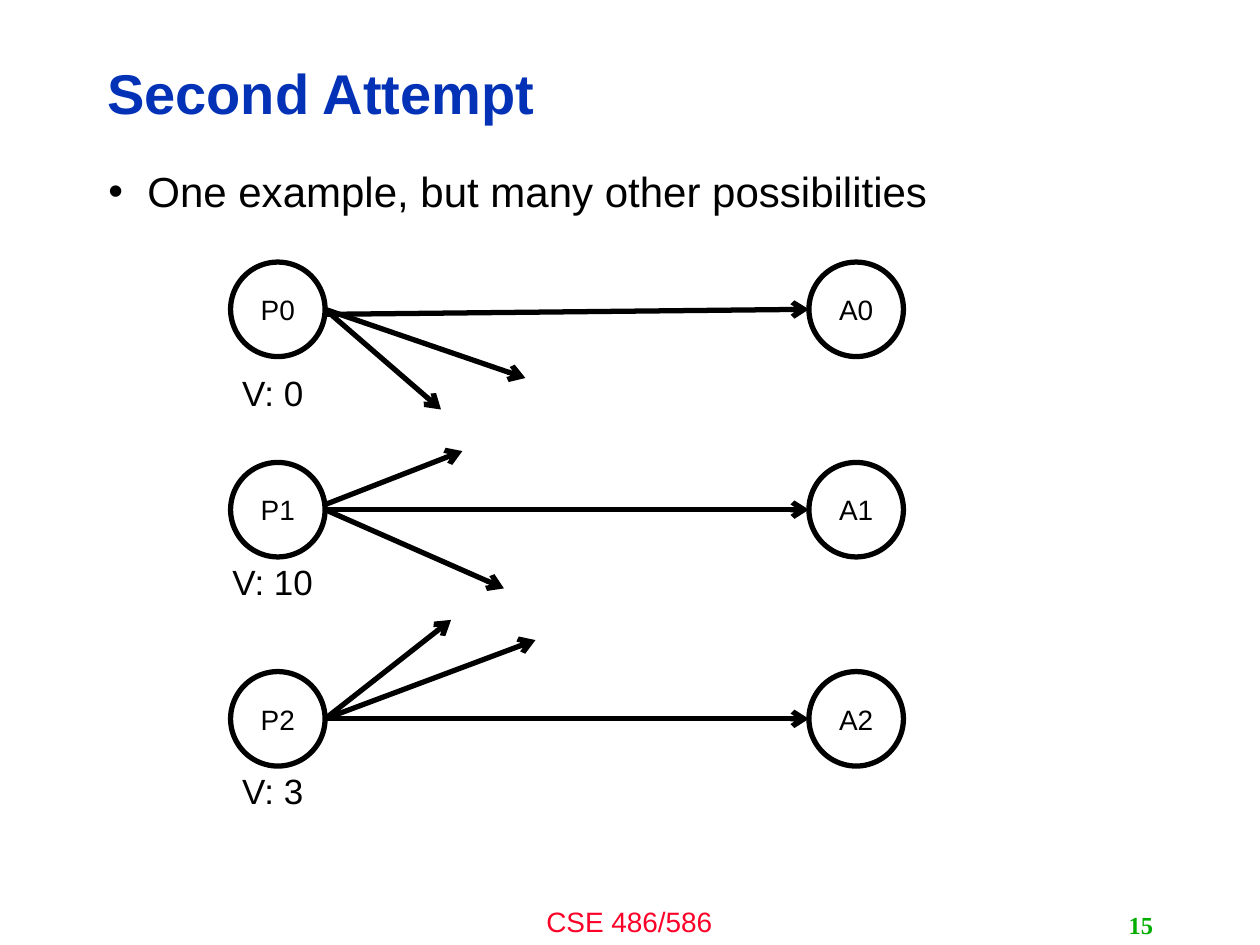
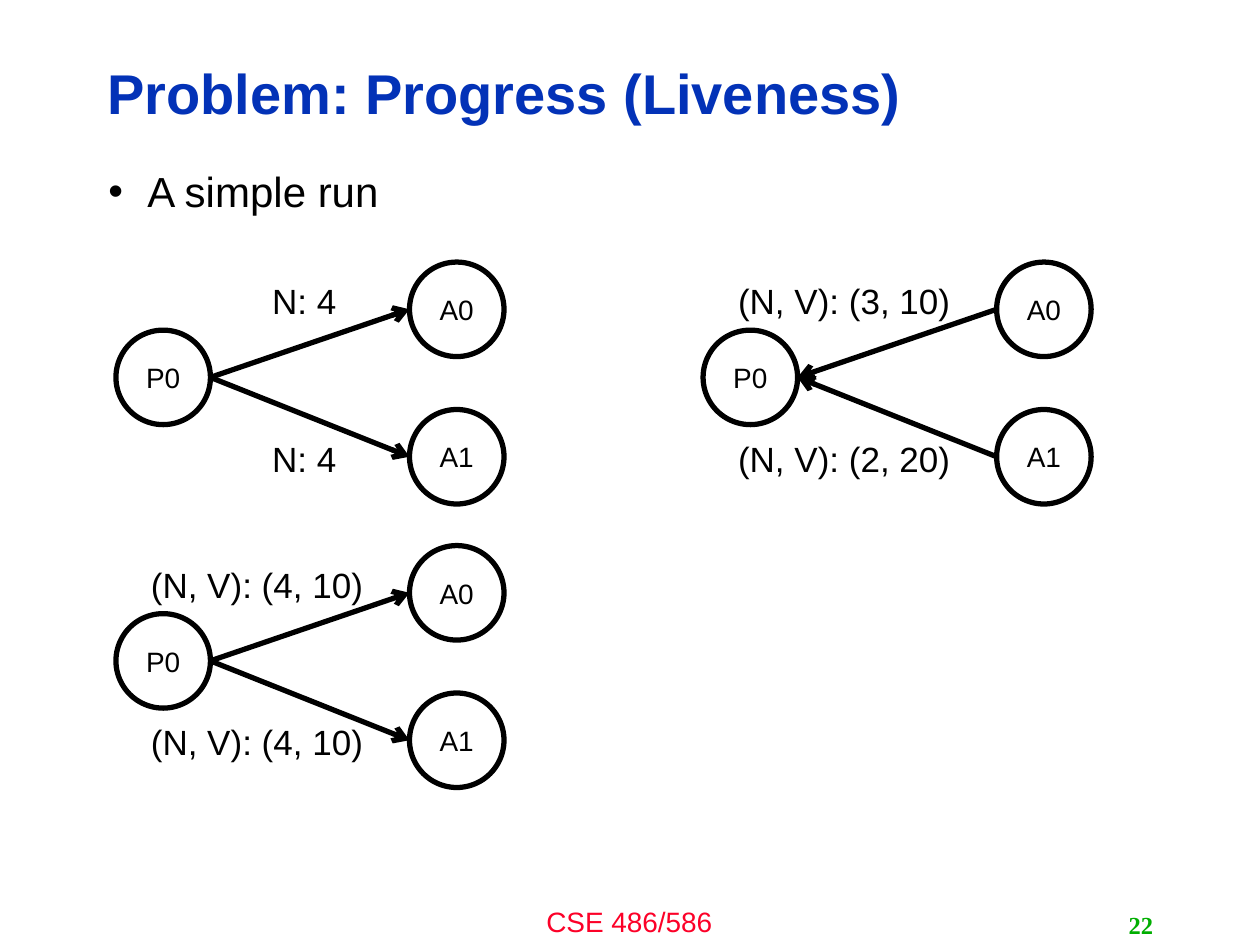
"""Build two lecture slides about proposers and acceptors exchanging messages."""
import dataclasses

import lxml.etree
import pptx
import pptx.dml.color
import pptx.enum.shapes
import pptx.enum.text
import pptx.oxml.ns
import pptx.util

Inches = pptx.util.Inches
Pt = pptx.util.Pt
Align = pptx.enum.text.PP_ALIGN
Anchor = pptx.enum.text.MSO_ANCHOR


@dataclasses.dataclass(frozen=True)
class Theme:
    font: str = "Arial"
    number_font: str = "Times New Roman"
    title_color: str = "0332B7"
    footer_color: str = "FC0128"
    number_color: str = "00AE00"
    ink: str = "000000"
    paper: str = "FFFFFF"
    title_size: int = 32
    body_size: int = 24
    label_size: int = 20
    small_size: int = 16
    number_size: int = 14
    line_width: int = 3
    line_spacing: float = 0.9


THEME = Theme()
FOOTER = "CSE 486/586"
NODE = 0.75
LABEL_HEIGHT = 0.44

ATTEMPT = {"title": "Second Attempt", "number": "15",
           "bullet": "One example, but many other possibilities"}
PROPOSER_LEFT, ACCEPTOR_LEFT = 1.83, 6.42
ATTEMPT_LABEL = (1.58, 1.17)
# Each arrow is (start y offset from the node centre, end x, end y).
ATTEMPT_ROWS = [
    {"index": 0, "top": 2.08, "value": "V: 0", "label_top": 2.9, "start_shift": 0.04,
     "lost": [(0, 4.17, 3), (0, 3.5, 3.25)]},
    {"index": 1, "top": 3.67, "value": "V: 10", "label_top": 4.4, "start_shift": 0,
     "lost": [(-0.04, 3.67, 3.58), (0, 4, 4.67)]},
    {"index": 2, "top": 5.33, "value": "V: 3", "label_top": 6.06, "start_shift": 0,
     "lost": [(0, 4.25, 5.08), (0, 3.58, 4.92)]},
]

PROGRESS = {"title": "Problem: Progress (Liveness)", "number": "22",
            "bullet": "A simple run"}
RUN_LEFT, RUN_TOP = 0.92, 2.62
RUN_COLUMN_STEP, RUN_ROW_STEP = 4.66, 2.25
ACCEPTOR_SHIFT = 2.33
ACCEPTORS = [("A0", -0.54, -0.45), ("A1", 0.63, 0.8)]
LABEL_RIGHT = 2.08
RUNS = [
    {"column": 0, "row": 0, "width": 1.17, "labels": ("N: 4", "N: 4"), "reply": False},
    {"column": 1, "row": 0, "width": 1.92,
     "labels": ("(N, V): (3, 10)", "(N, V): (2, 20)"), "reply": True},
    {"column": 0, "row": 1, "width": 1.92,
     "labels": ("(N, V): (4, 10)", "(N, V): (4, 10)"), "reply": False},
]


def rgb(color):
    return pptx.dml.color.RGBColor.from_string(color)


def write_text(shape, text, size, color=THEME.ink, font=THEME.font, bold=False,
               align=Align.CENTER, anchor=Anchor.TOP, spacing=None, inset=0.1):
    frame = shape.text_frame
    frame.word_wrap = True
    frame.auto_size = pptx.enum.text.MSO_AUTO_SIZE.NONE
    frame.vertical_anchor = anchor
    frame.margin_left = frame.margin_right = Inches(inset)
    frame.margin_top = frame.margin_bottom = Inches(inset / 2)
    paragraph = frame.paragraphs[0]
    paragraph.alignment = align
    paragraph.space_before = Pt(0)
    if spacing:
        paragraph.line_spacing = spacing
    run = paragraph.add_run()
    run.text = text
    run.font.name, run.font.size, run.font.bold = font, Pt(size), bold
    run.font.color.rgb = rgb(color)
    return paragraph


def place(shape, left, top, width, height):
    shape.left, shape.top = Inches(left), Inches(top)
    shape.width, shape.height = Inches(width), Inches(height)


def add_label(shapes, text, left, top, width, height=LABEL_HEIGHT,
              size=THEME.label_size, **style):
    box = shapes.add_textbox(Inches(left), Inches(top), Inches(width), Inches(height))
    write_text(box, text, size, **style)


def add_node(shapes, name, left, top):
    """Draw a named circle and return its left and right middle points."""
    node = shapes.add_shape(pptx.enum.shapes.MSO_SHAPE.OVAL, Inches(left), Inches(top),
                            Inches(NODE), Inches(NODE))
    node.shadow.inherit = False
    node.fill.solid()
    node.fill.fore_color.rgb = rgb(THEME.paper)
    node.line.color.rgb = rgb(THEME.ink)
    node.line.width = Pt(THEME.line_width)
    write_text(node, name, THEME.small_size, anchor=Anchor.MIDDLE, inset=0)
    middle = top + NODE / 2
    return (left, middle), (left + NODE, middle)


def add_arrow(shapes, start, end):
    arrow = shapes.add_connector(pptx.enum.shapes.MSO_CONNECTOR.STRAIGHT,
                                 *(Inches(value) for value in (*start, *end)))
    arrow.line.color.rgb = rgb(THEME.ink)
    arrow.line.width = Pt(THEME.line_width)
    qn = pptx.oxml.ns.qn
    properties = arrow._element.spPr
    lxml.etree.SubElement(properties.find(qn("a:ln")), qn("a:tailEnd"), type="arrow")
    lxml.etree.SubElement(properties, qn("a:effectLst"))


def add_slide(presentation, content):
    slide = presentation.slides.add_slide(presentation.slide_layouts[1])
    title, body = slide.shapes.title, slide.placeholders[1]
    place(title, 0.75, 0.36, 7.98, 0.81)
    write_text(title, content["title"], THEME.title_size, color=THEME.title_color, bold=True,
               align=Align.LEFT, anchor=Anchor.MIDDLE, spacing=THEME.line_spacing)
    place(body, 0.76, 1.31, 8.4, 5.39)
    paragraph = write_text(body, content["bullet"], THEME.body_size, align=Align.LEFT,
                           spacing=THEME.line_spacing)
    properties = paragraph._p.get_or_add_pPr()
    properties.set("marL", str(Inches(0.31)))
    properties.set("indent", str(-Inches(0.31)))
    lxml.etree.SubElement(properties, pptx.oxml.ns.qn("a:buChar"), char="•")
    add_label(slide.shapes, FOOTER, 3.33, 7.13, 3.33, 0.37, THEME.small_size,
              color=THEME.footer_color)
    add_label(slide.shapes, content["number"], 7.17, 7.18, 2.08, 0.32, THEME.number_size,
              color=THEME.number_color, font=THEME.number_font, bold=True,
              align=Align.RIGHT, anchor=Anchor.MIDDLE)
    return slide


def add_attempt_row(shapes, row):
    _, (start_x, middle) = add_node(shapes, f"P{row['index']}", PROPOSER_LEFT, row["top"])
    target, _ = add_node(shapes, f"A{row['index']}", ACCEPTOR_LEFT, row["top"])
    for shift, *end in [(row["start_shift"], *target), *row["lost"]]:
        add_arrow(shapes, (start_x, middle + shift), end)
    left, width = ATTEMPT_LABEL
    add_label(shapes, row["value"], left, row["label_top"], width)


def add_message_run(shapes, run):
    left = RUN_LEFT + run["column"] * RUN_COLUMN_STEP
    top = RUN_TOP + run["row"] * RUN_ROW_STEP
    _, proposer = add_node(shapes, "P0", left, top)
    for (name, shift, label_shift), label in zip(ACCEPTORS, run["labels"]):
        acceptor, _ = add_node(shapes, name, left + ACCEPTOR_SHIFT, top + shift)
        ends = (acceptor, proposer) if run["reply"] else (proposer, acceptor)
        add_arrow(shapes, *ends)
        add_label(shapes, label, left + LABEL_RIGHT - run["width"], top + label_shift,
                  run["width"])


def main():
    presentation = pptx.Presentation()
    presentation.slide_width, presentation.slide_height = Inches(10), Inches(7.5)
    attempt = add_slide(presentation, ATTEMPT)
    for row in ATTEMPT_ROWS:
        add_attempt_row(attempt.shapes, row)
    progress = add_slide(presentation, PROGRESS)
    for run in RUNS:
        add_message_run(progress.shapes.add_group_shape().shapes, run)
    presentation.save("out.pptx")


if __name__ == "__main__":
    main()
